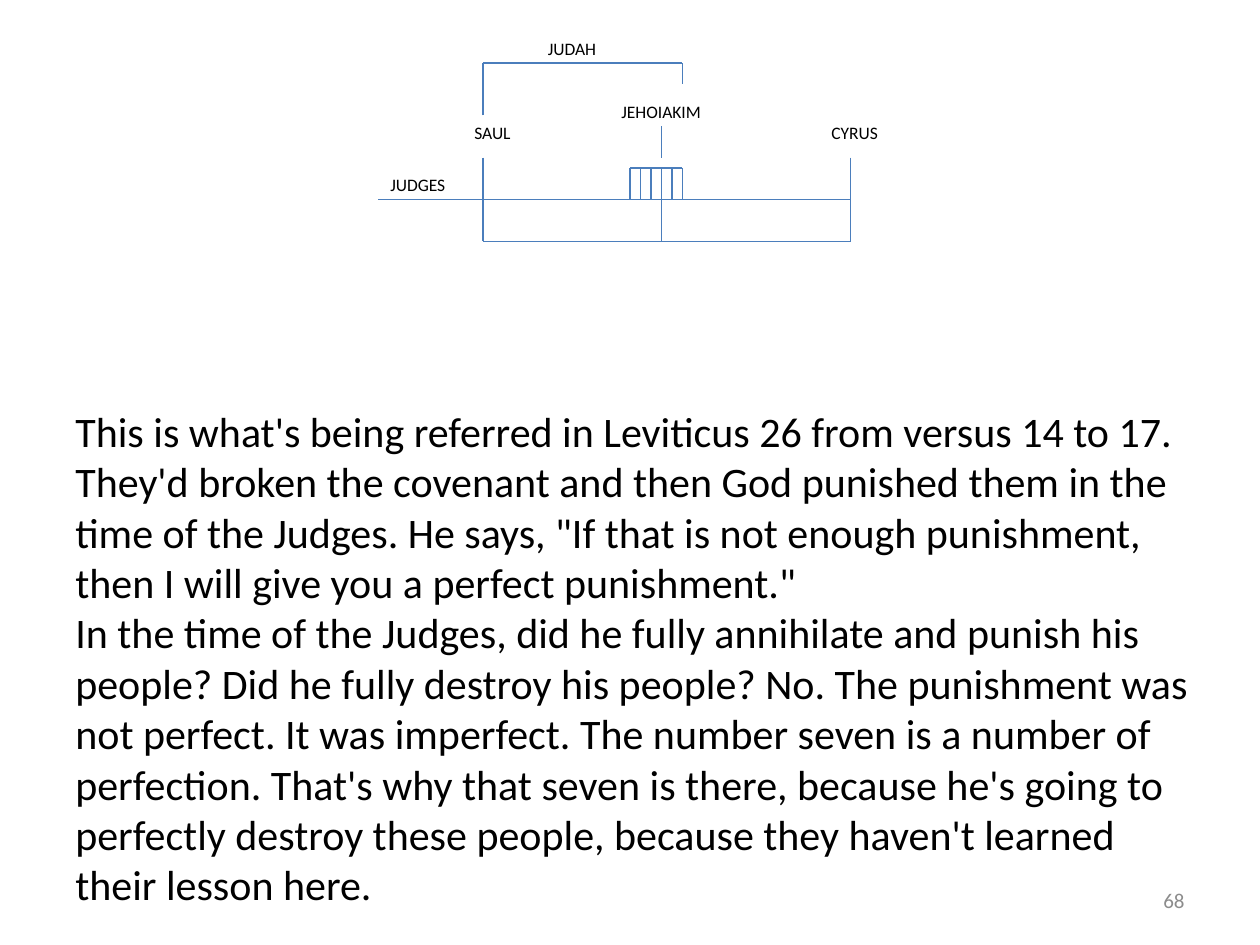
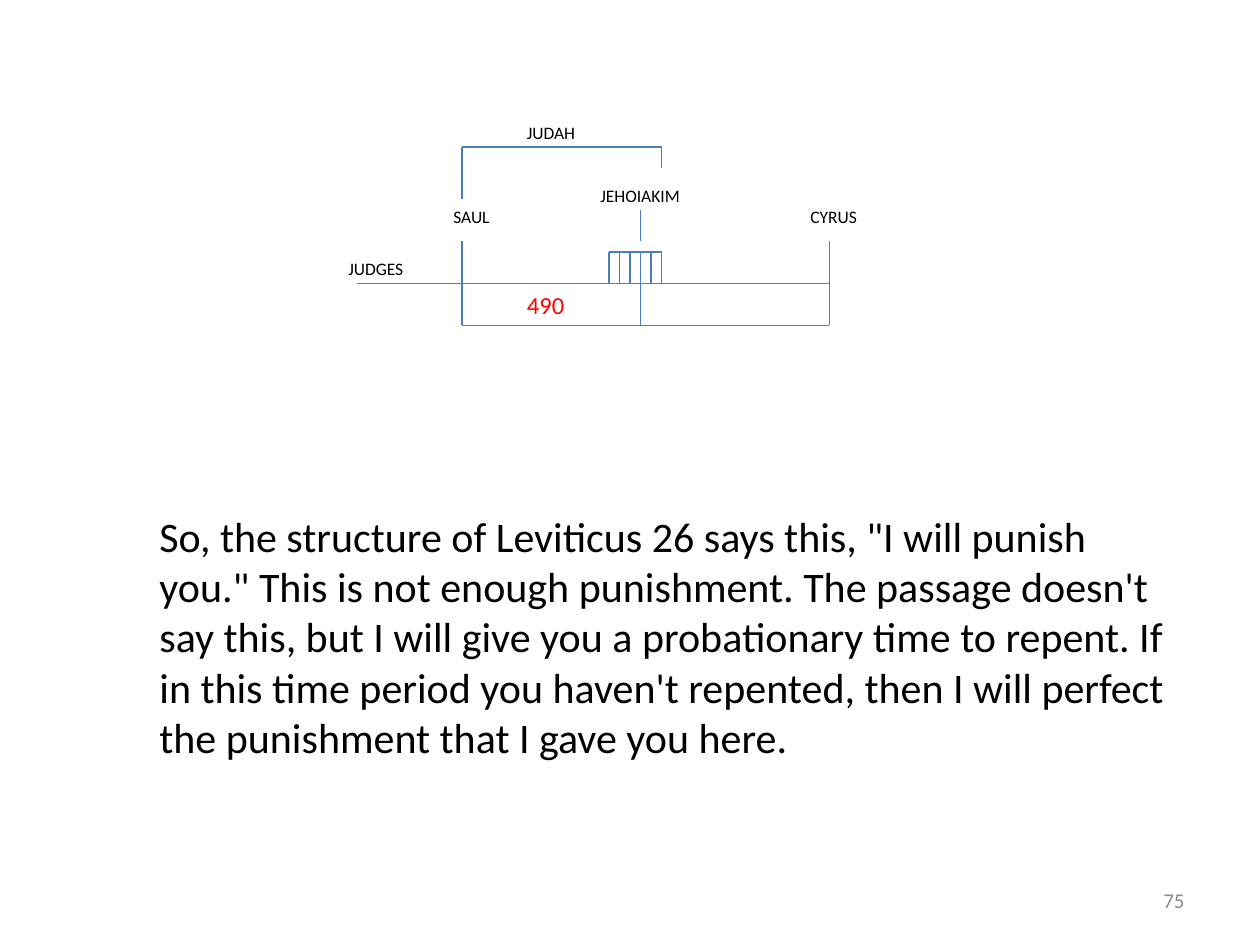
from dataclasses import dataclass

from lxml.etree import SubElement
from pptx import Presentation
from pptx.dml.color import RGBColor
from pptx.enum.shapes import MSO_CONNECTOR as Connector
from pptx.enum.text import MSO_ANCHOR as Anchor, MSO_AUTO_SIZE as AutoSize, PP_ALIGN as Align
from pptx.oxml.ns import qn
from pptx.util import Emu, Pt


@dataclass(frozen=True)
class Theme:
    font: str = "Calibri"
    ink: str = "000000"
    accent: str = "FF0000"
    muted: str = "8C8C8C"
    line: str = "4B7EBC"
    line_width: float = 0.75
    label_size: int = 10
    number_size: int = 12
    period_size: int = 14
    body_size: int = 24


THEME = Theme()
SLIDE_WIDTH, SLIDE_HEIGHT = 960, 720
LABEL_HEIGHT = 26
NUMBER_BOX = (688, 667, 224, 38)


def px(length):
    """Turn pixels, 96 to the inch, into EMU."""
    return Emu(length * 9525)


def add_text(slide, box, paragraphs, size, color=THEME.ink, align=Align.LEFT,
             anchor=Anchor.TOP, wrap=True, grow=True):
    frame = slide.shapes.add_textbox(*map(px, box)).text_frame
    frame.word_wrap = wrap
    frame.vertical_anchor = anchor
    frame.auto_size = AutoSize.SHAPE_TO_FIT_TEXT if grow else AutoSize.NONE
    for index, text in enumerate(paragraphs):
        paragraph = frame.add_paragraph() if index else frame.paragraphs[0]
        paragraph.alignment = align
        run = paragraph.add_run()
        run.text = text
        run.font.name = THEME.font
        run.font.size = Pt(size)
        run.font.color.rgb = RGBColor.from_string(color)


def add_line(slide, x1, y1, x2, y2):
    line = slide.shapes.add_connector(Connector.STRAIGHT, *map(px, (x1, y1, x2, y2)))
    line.line.color.rgb = RGBColor.from_string(THEME.line)
    line.line.width = Pt(THEME.line_width)
    SubElement(line._element.spPr, qn("a:effectLst"))


def add_timeline(slide, left, top, judges_shift=0, period=None):
    """Draw the kings' timeline with its top left corner at the given point."""
    saul, jehoiakim, cyrus = 80, 216, 360
    reigns_left, reigns_right, reign_width = 192, 232, 8
    bracket, reigns_top, axis, base = 24, 104, 128, 160
    stem_top = 96

    reigns = [(x, reigns_top, x, axis)
              for x in range(reigns_left, reigns_right + 1, reign_width)]
    reign_edges = [(reigns_left, y, reigns_right, y) for y in (reigns_top, axis)]
    stems = [(x, stem_top, x, axis) for x in (saul, cyrus)]
    stems.append((jehoiakim, 72, jehoiakim, stem_top))
    drops = [(x, axis, x, base) for x in (saul, jehoiakim, cyrus)]
    spans = [(saul, y, cyrus, y) for y in (axis, base)]
    judges = [(0, axis, saul, axis)]
    judah = [(saul, 64, saul, bracket),
             (saul, bracket, reigns_right, bracket),
             (reigns_right, bracket, reigns_right, 40)]
    for x1, y1, x2, y2 in reigns + reign_edges + stems + drops + spans + judges + judah:
        add_line(slide, left + x1, top + y1, left + x2, top + y2)

    labels = [("SAUL", 64, 64, 56), ("CYRUS", 336, 64, 80),
              ("JEHOIAKIM", 176, 48, 81), ("JUDAH", 120, 0, 96),
              ("JUDGES", judges_shift, reigns_top, 96)]
    for text, x, y, width in labels:
        add_text(slide, (left + x, top + y, width, LABEL_HEIGHT), [text],
                 THEME.label_size, wrap=text != "JEHOIAKIM")
    if period:
        add_text(slide, (left + 120, top + axis, 80, 33), [period],
                 THEME.period_size, THEME.accent)


def add_slide(presentation, number, body_box, paragraphs, **timeline):
    slide = presentation.slides.add_slide(presentation.slide_layouts[6])
    add_timeline(slide, **timeline)
    add_text(slide, body_box, paragraphs, THEME.body_size)
    add_text(slide, NUMBER_BOX, [number], THEME.number_size, THEME.muted,
             Align.RIGHT, Anchor.MIDDLE, grow=False)


def main():
    presentation = Presentation()
    presentation.slide_width = px(SLIDE_WIDTH)
    presentation.slide_height = px(SLIDE_HEIGHT)
    add_slide(presentation, "68", (48, 304, 872, 426), [
        "This is what's being referred in Leviticus 26 from versus 14 to 17. "
        "They'd broken the covenant and then God punished them in the time of the "
        "Judges. He says, \"If that is not enough punishment, then I will give you "
        "a perfect punishment.\"",
        "In the time of the Judges, did he fully annihilate and punish his people? "
        "Did he fully destroy his people? No. The punishment was not perfect. It was "
        "imperfect. The number seven is a number of perfection. That's why that seven "
        "is there, because he's going to perfectly destroy these people, because they "
        "haven't learned their lesson here.",
    ], left=288, top=24)
    add_slide(presentation, "75", (112, 384, 800, 232), [
        "So, the structure of Leviticus 26 says this, \"I will punish you.\" This is "
        "not enough punishment. The passage doesn't say this, but I will give you a "
        "probationary time to repent. If in this time period you haven't repented, "
        "then I will perfect the punishment that I gave you here.",
    ], left=272, top=88, judges_shift=-16, period="490")
    presentation.save("out.pptx")


if __name__ == "__main__":
    main()
